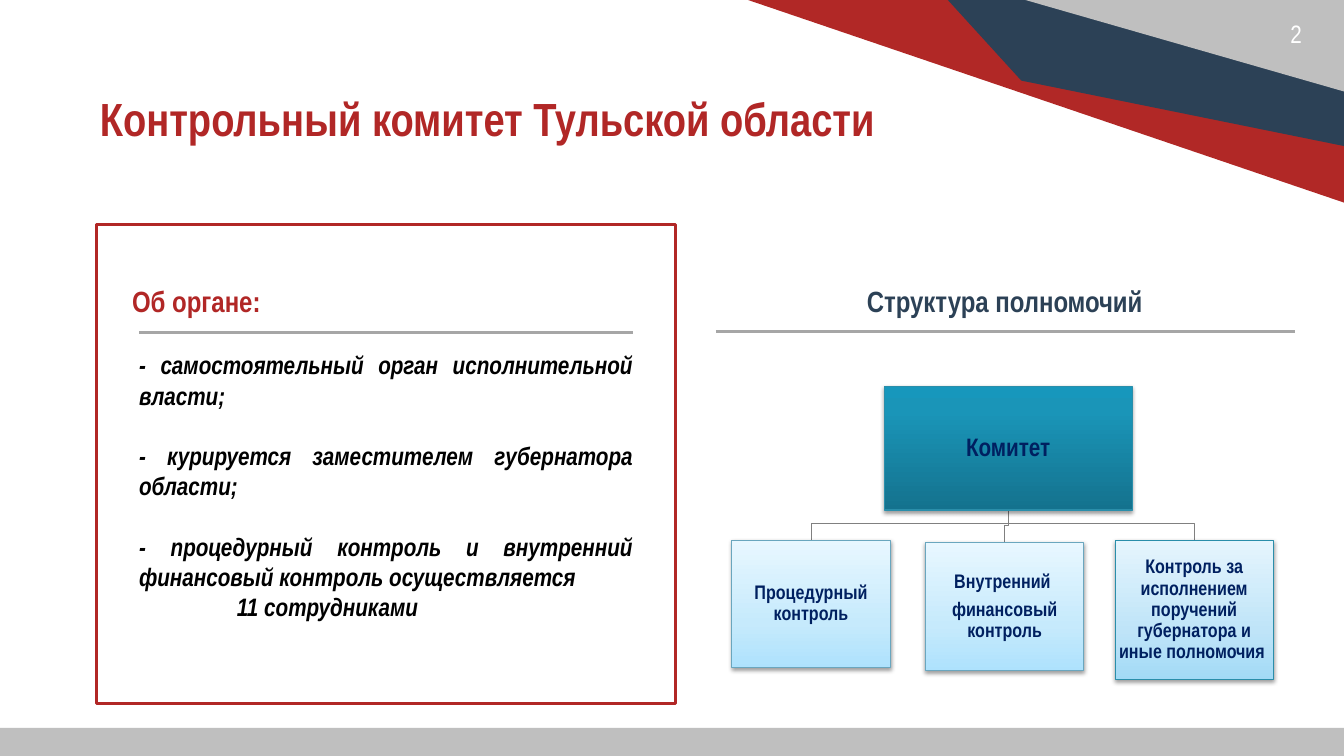
from pptx import Presentation
from pptx import util as u
from pptx.dml.color import RGBColor
from pptx.enum import shapes, text
from pptx.oxml import parse_xml
from pptx.oxml.ns import nsdecls

# Content: every position and size is a percentage of the slide's width or height
WIDTH, HEIGHT = 13.33, 7.5
FONT = "Arial Narrow"
COLORS = {"red": "B12726", "ribbon": "B12826", "navy": "2C4156", "gray": "BFBFBF",
          "rule": "A6A6A6", "link": "808080", "label": "002060", "black": "000000",
          "white": "FFFFFF", "teal": "2A8EAA", "steel": "6AA6BE"}
GRADIENTS = {"committee": [(0, "14728E"), (80, "1A95B8"), (100, "1797BC")],
             "power": [(0, "AEE2FD"), (35, "C6EAFC"), (100, "E8F7FF")],
             "other": [(0, "A2DAF6"), (35, "BFE4F8"), (100, "E5F5FD")]}
RIBBONS = [("ribbon", [(100, 0), (100, 26.8), (55.66, 0)]),
           ("navy", [(100, 0), (100, 19.33), (75.99, 10.67), (70.52, 0)]),
           ("gray", [(100, 0), (100, 12.1), (76.3, 0)])]
FOOTER = (0, 96.27, 100, 3.73)
FRAME = (7.2, 29.73, 43.06, 63.33)
RULES = [(10.35, 47.11, 44), (53.26, 96.32, 43.87)]

# Text, area, size, colour, bold, alignment, line spacing
LABELS = [
    ("2", (96.02, 2.4, 3, 4), 18, "white", False, "LEFT", 1),
    ("Контрольный комитет Тульской области", (7.43, 12.53, 86.2, 11.33),
     33.2, "red", True, "LEFT", 0.93),
    ("Об органе:", (9.83, 37.47, 37.21, 4.67), 20.9, "red", True, "LEFT", 1),
    ("Структура полномочий", (52.96, 37.47, 43.59, 4.67), 20.9, "navy", True, "CENTER", 1),
]
ABOUT_AREA = (10.35, 46.27, 36.76, 43.47)
# Text, alignment, left indent in inches, space after in points
ABOUT = [
    ("- самостоятельный орган исполнительной власти;", "JUSTIFY", 0, 21.6),
    ("- курируется заместителем губернатора области;", "JUSTIFY", 0, 21.6),
    ("- процедурный контроль и внутренний финансовый контроль осуществляется",
     "JUSTIFY", 0, 0),
    ("11 сотрудниками", "LEFT", 0.97, 0),
]
COMMITTEE = (["Комитет"], (65.79, 51.07, 18.45, 16.4), "committee", "teal", 18)
POWERS = [
    (["Процедурный контроль"], (54.46, 71.47, 11.78, 16.8), "power", "steel", 14),
    (["Внутренний ", "финансовый контроль"], (68.87, 71.73, 11.78, 16.93),
     "power", "steel", 14),
    (["Контроль за исполнением поручений губернатора и иные полномочия "],
     (82.97, 71.47, 11.78, 18.4), "other", "teal", 14),
]
BEND = 2.27  # height of a link's last leg


def color(name):
    return RGBColor.from_string(COLORS[name])


def across(share):
    return u.Inches(WIDTH * share / 100)


def down(share):
    return u.Inches(HEIGHT * share / 100)


def place(area):
    left, top, width, height = area
    return across(left), down(top), across(width), down(height)


def add_rectangle(area):
    shape = page.shapes.add_shape(shapes.MSO_SHAPE.RECTANGLE, *place(area))
    shape.shadow.inherit = False
    return shape


def add_outline(points, closed):
    (x, y), *rest = [(across(x), down(y)) for x, y in points]
    builder = page.shapes.build_freeform(x, y)
    builder.add_line_segments(rest, close=closed)
    shape = builder.convert_to_shape()
    shape.shadow.inherit = False
    return shape


def set_line(shape, name, points):
    shape.line.color.rgb = color(name)
    shape.line.width = u.Pt(points)


def set_fill(shape, name):
    shape.fill.solid()
    shape.fill.fore_color.rgb = color(name)
    shape.line.fill.background()


def prepare(frame, margin=0):
    frame.word_wrap = True
    frame.margin_left = frame.margin_right = u.Inches(margin)
    frame.margin_top = frame.margin_bottom = u.Inches(margin)
    return frame


def format_paragraph(para, size, name, bold, align, spacing=1, italic=False):
    para.alignment = getattr(text.PP_ALIGN, align)
    para.line_spacing = spacing
    for span in para.runs:
        span.font.name, span.font.size = FONT, u.Pt(size)
        span.font.bold, span.font.italic = bold, italic
        span.font.color.rgb = color(name)


def add_node(lines, area, gradient, border, size):
    box = add_rectangle(area)
    set_line(box, border, 0.75)
    stops = "".join(f'<a:gs pos="{pos * 1000}"><a:srgbClr val="{tone}"/></a:gs>'
                    for pos, tone in GRADIENTS[gradient])
    properties = box.element.spPr
    properties.insert(2, parse_xml(
        f'<a:gradFill {nsdecls("a")} rotWithShape="1"><a:gsLst>{stops}</a:gsLst>'
        '<a:lin ang="16200000" scaled="0"/></a:gradFill>'))
    properties.find("{*}effectLst").append(parse_xml(
        f'<a:outerShdw {nsdecls("a")} blurRad="{u.Pt(3.1)}" dist="{u.Pt(1.6)}" '
        'dir="5400000" rotWithShape="0"><a:srgbClr val="000000">'
        '<a:alpha val="38000"/></a:srgbClr></a:outerShdw>'))
    frame = prepare(box.text_frame, 0.01)
    frame.vertical_anchor = text.MSO_ANCHOR.MIDDLE
    frame.text = "\n".join(lines)
    for para in frame.paragraphs:
        format_paragraph(para, size, "label", True, "CENTER", 0.9)
        para.space_after = u.Pt(size * 0.35)


deck = Presentation()
deck.slide_width, deck.slide_height = u.Inches(WIDTH), u.Inches(HEIGHT)
page = deck.slides.add_slide(deck.slide_layouts[6])

# Footer band and corner ribbons
set_fill(add_rectangle(FOOTER), "gray")
for name, points in RIBBONS:
    set_fill(add_outline(points, True), name)

# Frame and heading rules
border = add_rectangle(FRAME)
border.fill.background()
set_line(border, "red", 2.25)
for start, end, y in RULES:
    rule = page.shapes.add_connector(shapes.MSO_CONNECTOR.STRAIGHT,
                                     across(start), down(y), across(end), down(y))
    set_line(rule, "rule", 1.75)
    rule.element.spPr.append(parse_xml(f'<a:effectLst {nsdecls("a")}/>'))

# Page number, title and headings
for words, area, *style in LABELS:
    frame = prepare(page.shapes.add_textbox(*place(area)).text_frame)
    frame.text = words
    format_paragraph(frame.paragraphs[0], *style)

# Description of the body
frame = prepare(page.shapes.add_textbox(*place(ABOUT_AREA)).text_frame)
frame.text = "\n".join(item[0] for item in ABOUT)
for para, (_, align, indent, gap) in zip(frame.paragraphs, ABOUT):
    format_paragraph(para, 18, "black", True, align, italic=True)
    para.space_after = u.Pt(gap)
    para._p.get_or_add_pPr().set("marL", str(u.Inches(indent)))

# Structure: links first, then boxes over them
left, top, width, height = COMMITTEE[1]
trunk, base = left + width / 2, top + height
for _, (left, top, width, height), *_ in POWERS:
    middle, bend = left + width / 2, top - BEND
    link = add_outline([(trunk, base), (trunk, bend), (middle, bend), (middle, top)], False)
    link.fill.background()
    set_line(link, "link", 0.75)
for node in [COMMITTEE, *POWERS]:
    add_node(*node)

deck.save("out.pptx")
